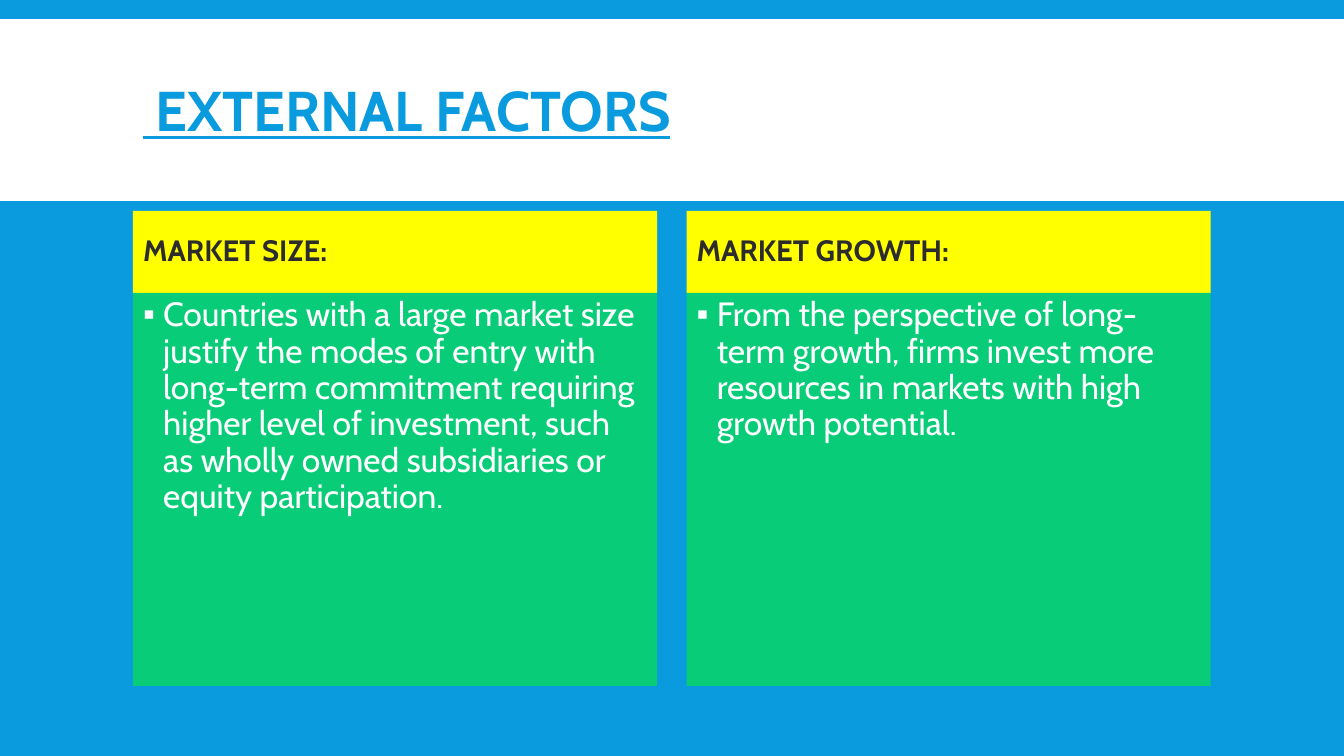
from pptx import Presentation
from pptx.dml.color import RGBColor
from pptx.enum.shapes import MSO_SHAPE
from pptx.enum.text import MSO_ANCHOR, MSO_AUTO_SIZE, PP_ALIGN
from pptx.util import Pt
from lxml.etree import SubElement
from pptx.oxml.ns import qn

BLUE, WHITE, YELLOW, GREEN, DARK = "099BDD", "FFFFFF", "FFFF00", "08CC78", "2C2C2C"


def paint(fill, color):
    fill.solid()
    fill.fore_color.rgb = RGBColor.from_string(color)


def write(box, text, at, size, color, fill=None, bold=False, line=False,
          anchor=MSO_ANCHOR.MIDDLE, space=0.9, before=12, after=2, bullet=None):
    """Place a placeholder and give it one formatted paragraph."""
    box.left, box.top, box.width, box.height = [Pt(n) for n in at]
    if fill:
        paint(box.fill, fill)
    frame = box.text_frame
    frame.word_wrap = True
    frame.auto_size = MSO_AUTO_SIZE.NONE
    frame.vertical_anchor = anchor
    para = frame.paragraphs[0]
    para.alignment = PP_ALIGN.LEFT
    para.line_spacing = space
    para.space_before, para.space_after = Pt(before), Pt(after)
    run = para.add_run()
    run.text = text
    font = run.font
    font.name, font.size, font.bold, font.underline = "Cabin", Pt(size), bold, line
    paint(font.fill, color)
    props = para._p.get_or_add_pPr()
    indent = Pt(14.4) if bullet else 0
    props.set("marL", str(indent))
    props.set("indent", str(-indent))
    if bullet:
        tint = SubElement(props, qn("a:buClr"))
        SubElement(tint, qn("a:srgbClr"), val=color)
        SubElement(props, qn("a:buChar"), char=bullet)
    else:
        SubElement(props, qn("a:buNone"))


deck = Presentation()
deck.slide_width, deck.slide_height = Pt(960), Pt(540)
slide = deck.slides.add_slide(deck.slide_layouts.get_by_name("Comparison"))
paint(slide.background.fill, BLUE)

# White title band, behind the placeholders
band = slide.shapes.add_shape(MSO_SHAPE.RECTANGLE, 0, Pt(13.7), Pt(960), Pt(129.8))
band.shadow.inherit = False
paint(band.fill, WHITE)
band.line.fill.background()
slide.shapes._spTree.insert(2, band._element)

left, width, step = 95, 374.4, 395.4
write(slide.shapes.title, " EXTERNAL FACTORS", (left, 22.3, 770.4, 118.8), 40, BLUE,
      bold=True, line=True, space=0.85, before=0, after=0)

# Two columns: a yellow heading above a green panel
columns = [
    ("MARKET SIZE:",
     "Countries with a large market size justify the modes of entry with long-term "
     "commitment requiring higher level of investment, such as wholly owned "
     "subsidiaries or equity participation."),
    ("MARKET GROWTH:",
     "From the perspective of long-term growth, firms invest more resources in "
     "markets with high growth potential."),
]
holders = slide.placeholders
for i, (head, body) in enumerate(columns):
    x = left + i * step
    write(holders[2 * i + 1], head, (x, 150.7, width, 58.5), 21, DARK,
          fill=YELLOW, bold=True)
    write(holders[2 * i + 2], body, (x, 209.2, width, 280.8), 24, WHITE,
          fill=GREEN, anchor=MSO_ANCHOR.TOP, bullet="▪")

deck.save("out.pptx")
